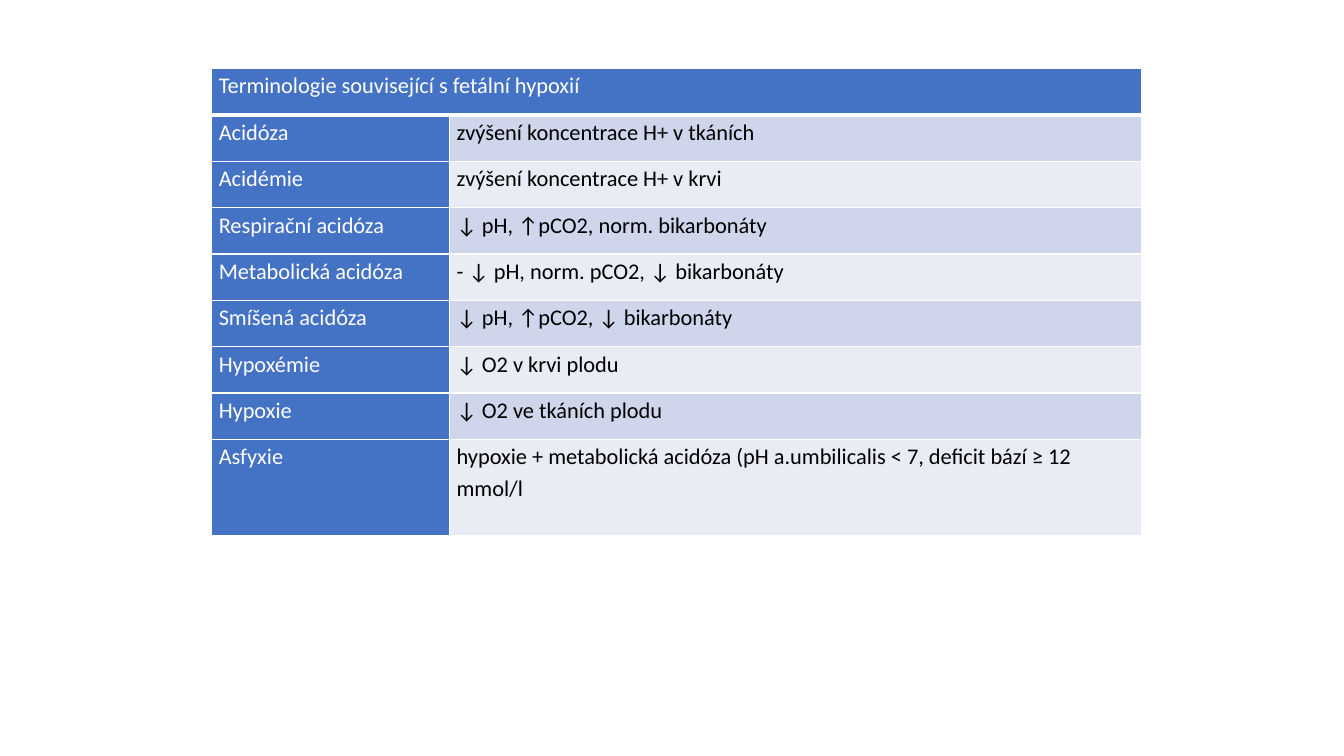
"""Build a slide with a table of terms related to fetal hypoxia."""
import pptx
import pptx.dml.color
import pptx.oxml
import pptx.oxml.ns
import pptx.util
from pptx.util import Inches

COLORS = {
    "heading": "4472C4",
    "odd_row": "CFD5EA",
    "even_row": "E9EBF5",
    "border": "FFFFFF",
    "light_text": "FFFFFF",
    "dark_text": "000000",
}
TITLE = "Terminologie související s fetální hypoxií"
TERMS = [
    ("Acidóza", "zvýšení koncentrace H+ v tkáních"),
    ("Acidémie", "zvýšení koncentrace H+ v krvi"),
    ("Respirační acidóza", "↓ pH, ↑pCO2, norm. bikarbonáty"),
    ("Metabolická acidóza", "- ↓ pH, norm. pCO2, ↓ bikarbonáty"),
    ("Smíšená acidóza", "↓ pH, ↑pCO2, ↓ bikarbonáty"),
    ("Hypoxémie", "↓ O2 v krvi plodu"),
    ("Hypoxie", "↓ O2 ve tkáních plodu"),
    ("Asfyxie", "hypoxie + metabolická acidóza (pH a.umbilicalis < 7, deficit bází ≥ 12 mmol/l"),
]
COLUMN_WIDTHS = [2.36, 6.86]
ROW_HEIGHTS = [0.46] * len(TERMS) + [0.95]


def rgb(name):
    return pptx.dml.color.RGBColor.from_string(COLORS[name])


def add_borders(cell, bottom_width):
    properties = cell._tc.get_or_add_tcPr()
    for side, width in (("L", 1), ("R", 1), ("T", 1), ("B", bottom_width)):
        properties.append(pptx.oxml.parse_xml(
            f'<a:ln{side} {pptx.oxml.ns.nsdecls("a")} w="{pptx.util.Pt(width)}">'
            f'<a:solidFill><a:srgbClr val="{COLORS["border"]}"/></a:solidFill></a:ln{side}>'))


def style_cell(cell, text, fill, text_color, bottom_width=1):
    add_borders(cell, bottom_width)
    cell.fill.solid()
    cell.fill.fore_color.rgb = rgb(fill)
    cell.margin_left = cell.margin_right = Inches(0.07)
    cell.margin_top = cell.margin_bottom = 0
    cell.text = text
    paragraph = cell.text_frame.paragraphs[0]
    paragraph.line_spacing = 1.15
    paragraph.font.name = "Calibri"
    paragraph.font.size = pptx.util.Pt(16)
    paragraph.font.color.rgb = rgb(text_color)


def add_terms_table(slide):
    frame = slide.shapes.add_table(
        len(ROW_HEIGHTS), len(COLUMN_WIDTHS), Inches(2.1), Inches(0.68),
        Inches(sum(COLUMN_WIDTHS)), Inches(sum(ROW_HEIGHTS)))
    table = frame.table
    table.first_col = True
    for column, width in zip(table.columns, COLUMN_WIDTHS):
        column.width = Inches(width)
    for row, height in zip(table.rows, ROW_HEIGHTS):
        row.height = Inches(height)

    table.cell(0, 0).merge(table.cell(0, 1))
    for column, text in enumerate((TITLE, "")):
        style_cell(table.cell(0, column), text, "heading", "light_text", bottom_width=3)
    for row, (term, meaning) in enumerate(TERMS, start=1):
        band = "odd_row" if row % 2 else "even_row"
        style_cell(table.cell(row, 0), term, "heading", "light_text")
        style_cell(table.cell(row, 1), meaning, band, "dark_text")


def main():
    presentation = pptx.Presentation()
    presentation.slide_width = Inches(13.33)
    presentation.slide_height = Inches(7.5)
    slide = presentation.slides.add_slide(presentation.slide_layouts[6])
    add_terms_table(slide)
    presentation.save("out.pptx")


if __name__ == "__main__":
    main()
